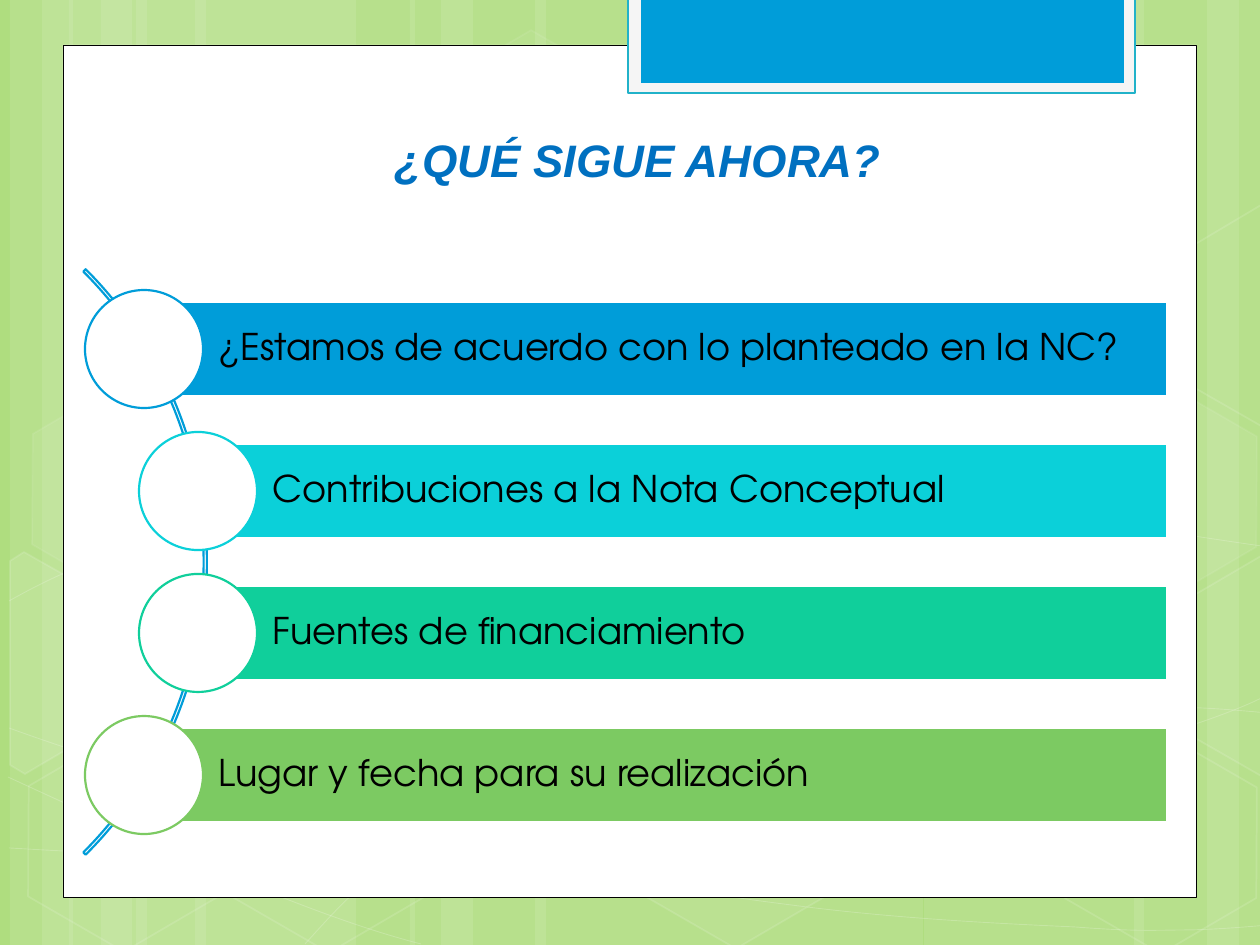
from typing import NamedTuple, Optional

from pptx import Presentation
from pptx.dml.color import RGBColor
from pptx.enum.shapes import MSO_SHAPE as Preset
from pptx.enum.text import MSO_ANCHOR as Anchor, MSO_AUTO_SIZE as AutoSize, PP_ALIGN as Align
from pptx.oxml.ns import qn
from pptx.oxml.xmlchemy import OxmlElement
from pptx.shapes.autoshape import Shape
from pptx.shapes.shapetree import SlideShapes
from pptx.util import Emu, Pt

PX = 914400 / 126

WHITE = RGBColor(0xFF, 0xFF, 0xFF)
BLACK = RGBColor(0, 0, 0)
PALE_GREEN = RGBColor(0xAF, 0xDD, 0x7F)
OFF_WHITE = RGBColor(0xF5, 0xF5, 0xF5)
TEAL = RGBColor(0x21, 0xB2, 0xC9)
BLUE = RGBColor(0x00, 0x9D, 0xD9)
CYAN = RGBColor(0x0B, 0xD0, 0xD9)
MINT = RGBColor(0x10, 0xCF, 0x9B)
GREEN = RGBColor(0x7C, 0xCA, 0x62)
TITLE_BLUE = RGBColor(0x00, 0x70, 0xC0)

Point = tuple[int, int]


class Box(NamedTuple):
    left: int
    top: int
    width: int
    height: int


class Stroke(NamedTuple):
    color: RGBColor
    width: float
    opacity: int = 100


class Hexagon(NamedTuple):
    left: int
    top: int
    fill_opacity: int
    line_opacity: int


class CutHexagon(NamedTuple):
    corners: list[Point]
    fill_opacity: int


class Step(NamedTuple):
    text: str
    color: RGBColor
    left: int


STRIPES = [
    (136, 220), (10, 63), (42, 105), (195, 220), (69, 63), (101, 105),
    (924, 220), (1207, 63), (1134, 105), (535, 388), (410, 63), (441, 105),
]
CURVES = [
    [(9, 848), (77, 852), (145, 856), (239, 854), (334, 853), (451, 851), (577, 838),
     (703, 825), (882, 801), (998, 777), (1113, 753), (1231, 716), (1269, 694)],
    [(9, 601), (45, 581), (82, 562), (152, 543), (224, 524), (326, 496), (437, 488),
     (549, 479), (685, 478), (824, 488), (963, 498), (1193, 537), (1269, 547)],
    [(8, 777), (160, 847), (311, 916), (421, 944)],
    [(9, 728), (48, 742), (88, 756), (161, 776), (234, 795), (344, 827), (450, 848),
     (554, 869), (687, 892), (791, 905), (896, 919), (1008, 924), (1075, 927),
     (1140, 932), (1158, 930), (1191, 930), (1223, 929), (1246, 927), (1269, 925)],
    [(305, 944), (328, 919), (350, 893), (381, 871), (411, 848), (454, 823), (489, 805),
     (524, 788), (546, 780), (592, 767), (638, 755), (722, 737), (766, 728),
     (811, 719), (818, 719), (857, 717), (896, 713), (958, 709), (1000, 708),
     (1044, 707), (1116, 708), (1116, 708), (1144, 708), (1173, 708), (1201, 708),
     (1223, 709), (1244, 711), (1256, 712), (1264, 713), (1268, 712), (1268, 713)],
]
HEXAGONS = [
    Hexagon(421, 45, 4, 8), Hexagon(626, 742, 6, 12), Hexagon(14, 745, 0, 12),
    Hexagon(18, 393, 7, 8), Hexagon(219, 746, 0, 12), Hexagon(949, 571, 10, 12),
    Hexagon(1051, 747, 0, 12), Hexagon(1051, 396, 7, 8),
]
CUT_HEXAGONS = [
    CutHexagon([(10, 561), (24, 552), (121, 607), (120, 718), (25, 774), (10, 765)], 10),
    CutHexagon([(1167, 611), (1261, 556), (1271, 562), (1271, 772), (1263, 777), (1167, 722)], 4),
    CutHexagon([(1167, 261), (1261, 205), (1273, 212), (1271, 422), (1263, 427), (1167, 372)], 0),
]
STEPS = [
    Step("¿Estamos de acuerdo con lo planteado en la NC?", BLUE, 144),
    Step("Contribuciones a la Nota Conceptual", CYAN, 198),
    Step("Fuentes de financiamiento", MINT, 198),
    Step("Lugar y fecha para su realización", GREEN, 144),
]
STEP_TOP, STEP_PITCH, STEP_RIGHT = 302, 142, 1167
BAR_HEIGHT, CIRCLE_SIZE = 94, 118


def px(length: int) -> Emu:
    return Emu(round(length * PX))


def set_opacity(parent, percent: int) -> None:
    if percent < 100:
        alpha = OxmlElement("a:alpha")
        alpha.set("val", str(percent * 1000))
        parent.find(qn("a:solidFill")).find(qn("a:srgbClr")).append(alpha)


def paint(shape: Shape, fill: Optional[RGBColor], stroke: Optional[Stroke] = None,
          opacity: int = 100) -> None:
    shape.shadow.inherit = False
    if fill is None or opacity == 0:
        shape.fill.background()
    else:
        shape.fill.solid()
        shape.fill.fore_color.rgb = fill
        set_opacity(shape.element.spPr, opacity)
    if stroke is None:
        shape.line.fill.background()
    else:
        shape.line.color.rgb = stroke.color
        shape.line.width = Pt(stroke.width)
        set_opacity(shape.element.spPr.find(qn("a:ln")), stroke.opacity)


def draw_preset(shapes: SlideShapes, preset: Preset, box: Box, fill: Optional[RGBColor],
                stroke: Optional[Stroke] = None, opacity: int = 100) -> Shape:
    shape = shapes.add_shape(preset, *map(px, box))
    paint(shape, fill, stroke, opacity)
    return shape


def draw_outline(shapes: SlideShapes, points: list[Point], closed: bool,
                 stroke: Stroke, opacity: int = 0) -> Shape:
    builder = shapes.build_freeform(*points[0], scale=PX)
    builder.add_line_segments(points[1:], close=closed)
    shape = builder.convert_to_shape()
    paint(shape, WHITE, stroke, opacity)
    return shape


def bend(outline: Shape) -> None:
    lines = list(outline.element.iter(qn("a:lnTo")))
    for first in range(0, len(lines), 3):
        curve = OxmlElement("a:cubicBezTo")
        lines[first].addprevious(curve)
        for line in lines[first:first + 3]:
            curve.append(line[0])
            line.getparent().remove(line)


def draw_backdrop(shapes: SlideShapes) -> None:
    for left, width in STRIPES:
        draw_preset(shapes, Preset.RECTANGLE, Box(left, 0, width, 945), WHITE, opacity=10)
    for controls in CURVES:
        bend(draw_outline(shapes, controls, False, Stroke(WHITE, 0.5, 20)))
    for left, top, fill_opacity, line_opacity in HEXAGONS:
        hexagon = draw_preset(shapes, Preset.HEXAGON, Box(left, top, 220, 192), WHITE,
                              Stroke(WHITE, 1, line_opacity), fill_opacity)
        hexagon.adjustments[0] = 0.285
        hexagon.rotation = 30
    for corners, fill_opacity in CUT_HEXAGONS:
        draw_outline(shapes, corners, True, Stroke(WHITE, 1, 12), fill_opacity)


def draw_panel(shapes: SlideShapes) -> None:
    draw_preset(shapes, Preset.RECTANGLE, Box(63, 45, 1134, 853), WHITE, Stroke(BLACK, 0.5))
    draw_preset(shapes, Preset.RECTANGLE, Box(628, -3, 507, 96), OFF_WHITE, Stroke(TEAL, 1.25))
    draw_preset(shapes, Preset.RECTANGLE, Box(641, -3, 483, 86), BLUE)


def place_title(title: Shape) -> None:
    title.element.getparent().append(title.element)
    title.left, title.top, title.width, title.height = map(px, Box(154, 125, 968, 68))
    frame = title.text_frame
    frame.text = "¿QUÉ SIGUE AHORA?"
    frame.auto_size = AutoSize.NONE
    frame.vertical_anchor = Anchor.BOTTOM
    paragraph = frame.paragraphs[0]
    paragraph.alignment = Align.CENTER
    font = paragraph.font
    font.name, font.size, font.bold, font.italic = "Arial", Pt(26), True, True
    font.color.rgb = TITLE_BLUE


def draw_step(shapes: SlideShapes, step: Step, top: int) -> None:
    bar = draw_preset(shapes, Preset.RECTANGLE,
                      Box(step.left, top, STEP_RIGHT - step.left, BAR_HEIGHT),
                      step.color, Stroke(WHITE, 1.25))
    frame = bar.text_frame
    frame.text = step.text
    frame.word_wrap = True
    frame.vertical_anchor = Anchor.MIDDLE
    frame.margin_left = px(75)
    frame.margin_top = frame.margin_right = frame.margin_bottom = px(8)
    paragraph = frame.paragraphs[0]
    paragraph.alignment = Align.LEFT
    paragraph.line_spacing = 0.9
    paragraph.font.name, paragraph.font.size = "TeX Gyre Adventor", Pt(21)
    paragraph.font.color.rgb = BLACK
    draw_preset(shapes, Preset.OVAL,
                Box(step.left - CIRCLE_SIZE // 2, top - 12, CIRCLE_SIZE, CIRCLE_SIZE),
                WHITE, Stroke(step.color, 1.25))


def main() -> None:
    deck = Presentation()
    deck.slide_width, deck.slide_height = px(1260), px(945)
    slide = deck.slides.add_slide(deck.slide_layouts[5])
    slide.background.fill.solid()
    slide.background.fill.fore_color.rgb = PALE_GREEN
    shapes = slide.shapes
    draw_backdrop(shapes)
    draw_panel(shapes)
    place_title(shapes.title)
    arc = draw_preset(shapes, Preset.BLOCK_ARC, Box(-621, 148, 828, 828), None, Stroke(BLUE, 1.25))
    for index, value in enumerate((189, 27, 0.004)):
        arc.adjustments[index] = value
    for row, step in enumerate(STEPS):
        draw_step(shapes, step, STEP_TOP + row * STEP_PITCH)
    deck.save("out.pptx")


if __name__ == "__main__":
    main()
